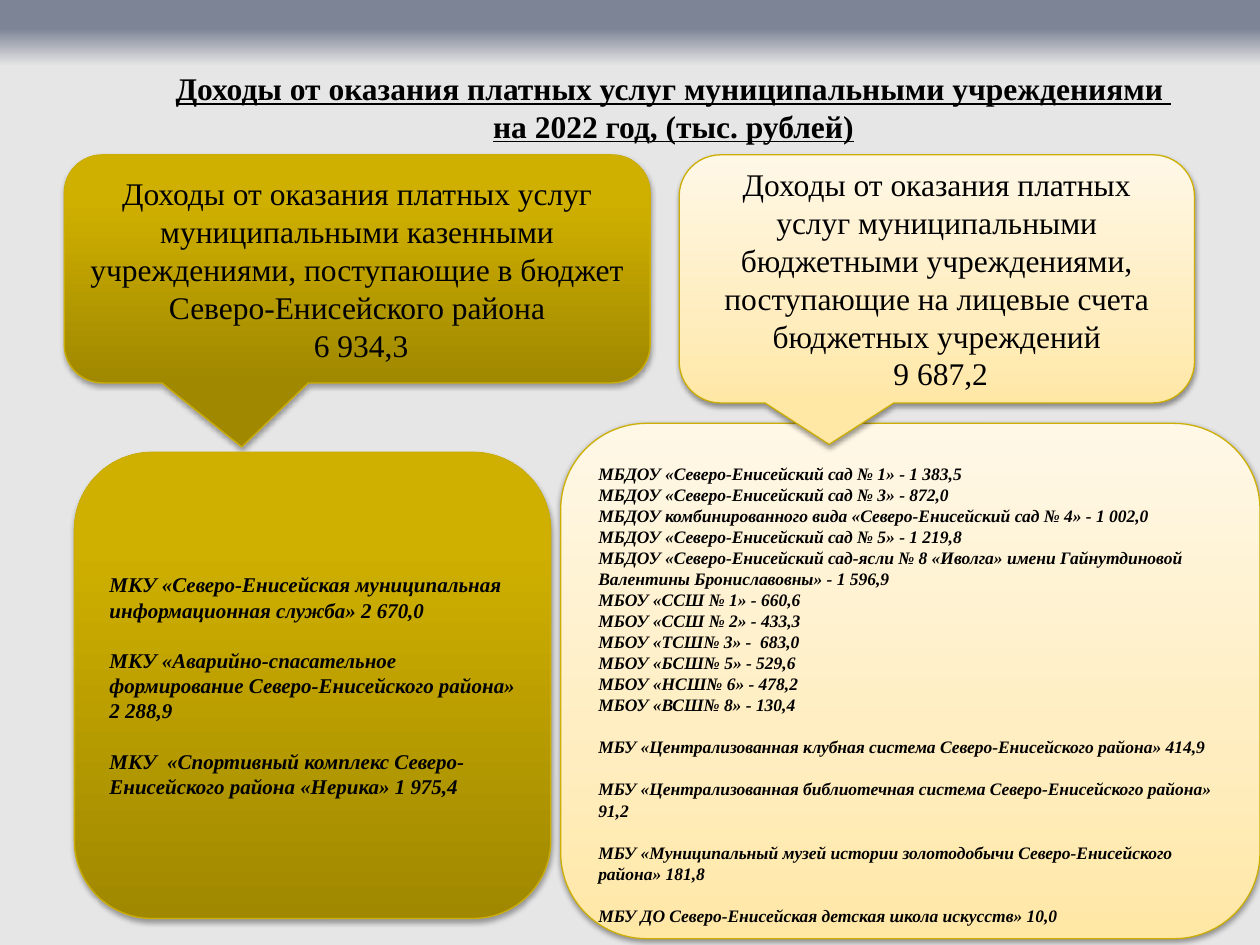
import pptx
import pptx.dml.color
import pptx.enum.shapes
import pptx.enum.text
import pptx.oxml.ns
import pptx.util
from dataclasses import dataclass
from lxml import etree

Pt = pptx.util.Pt
SHAPES = pptx.enum.shapes.MSO_SHAPE
ANCHOR = pptx.enum.text.MSO_ANCHOR
ALIGN = pptx.enum.text.PP_ALIGN
qn = pptx.oxml.ns.qn
Stops = tuple[tuple[int, str], ...]

FONT = "Times New Roman"
BACKDROP: Stops = ((0, "7D8496"), (3, "7D8496"), (7, "E6E6E6"), (100, "E6E6E6"))


@dataclass(frozen=True)
class Theme:
    stops: Stops
    shadow_opacity: int
    shadow_distance: float


@dataclass(frozen=True)
class Panel:
    kind: int
    box: tuple[float, float, float, float]
    theme: Theme
    lines: list[str]
    size: int
    adjustments: tuple[float, ...] = ()
    is_list: bool = False
    gap: float = 0
    gaps_before: tuple[int, ...] = ()
    anchor: int = ANCHOR.MIDDLE
    top_inset: float = 3.6


GOLD = Theme(((0, "A08800"), (80, "CFB000"), (100, "D0B100")), 35, 1.8)
CREAM = Theme(((0, "FFE7A5"), (35, "FFEDBF"), (100, "FFF8E7")), 38, 1.6)

TREASURY_LIST = [
    "МКУ «Северо-Енисейская муниципальная информационная служба» 2 670,0",
    "МКУ «Аварийно-спасательное формирование Северо-Енисейского района» 2 288,9",
    "МКУ  «Спортивный комплекс Северо-Енисейского района «Нерика» 1 975,4",
]
BUDGET_LIST = [
    "МБДОУ «Северо-Енисейский сад № 1» - 1 383,5",
    "МБДОУ «Северо-Енисейский сад № 3» - 872,0",
    "МБДОУ комбинированного вида «Северо-Енисейский сад № 4» - 1 002,0",
    "МБДОУ «Северо-Енисейский сад № 5» - 1 219,8",
    "МБДОУ «Северо-Енисейский сад-ясли № 8 «Иволга» имени Гайнутдиновой "
    "Валентины Брониславовны» - 1 596,9",
    "МБОУ «ССШ № 1» - 660,6",
    "МБОУ «ССШ № 2» - 433,3",
    "МБОУ «ТСШ№ 3» -  683,0",
    "МБОУ «БСШ№ 5» - 529,6",
    "МБОУ «НСШ№ 6» - 478,2",
    "МБОУ «ВСШ№ 8» - 130,4",
    "МБУ «Централизованная клубная система Северо-Енисейского района» 414,9",
    "МБУ «Централизованная библиотечная система Северо-Енисейского района» 91,2",
    "МБУ «Муниципальный музей истории золотодобычи Северо-Енисейского района» 181,8",
    "МБУ ДО Северо-Енисейская детская школа искусств» 10,0",
]

PANELS = [
    Panel(SHAPES.ROUNDED_RECTANGULAR_CALLOUT, (36.7, 88.5, 334.8, 130.3), GOLD,
          ["Доходы от оказания платных услуг муниципальными казенными учреждениями, "
           "поступающие в бюджет Северо-Енисейского района", " 6 934,3"],
          18, (-0.197, 0.781, 0.167)),
    Panel(SHAPES.FLOWCHART_ALTERNATE_PROCESS, (42.5, 258.5, 272.2, 266.4), GOLD,
          TREASURY_LIST, 12, is_list=True, gap=14.4, gaps_before=(1, 2)),
    Panel(SHAPES.ROUNDED_RECTANGLE, (320.4, 241.9, 399.6, 294.5), CREAM,
          BUDGET_LIST, 10, (0.167,), is_list=True, gap=12,
          gaps_before=(11, 12, 13, 14), anchor=ANCHOR.TOP, top_inset=8.3),
    Panel(SHAPES.ROUNDED_RECTANGULAR_CALLOUT, (388.1, 88.5, 294.5, 141.8), CREAM,
          ["Доходы от оказания платных услуг муниципальными бюджетными учреждениями, "
           "поступающие на лицевые счета бюджетных учреждений", " 9 687,2"],
          18, (-0.209, 0.667, 0.167)),
]


def color(value: str) -> pptx.dml.color.RGBColor:
    return pptx.dml.color.RGBColor.from_string(value)


def add_color(parent, value: str):
    return etree.SubElement(parent, qn("a:srgbClr"), val=value)


def set_gradient(fill, owner, stops: Stops, angle: int) -> None:
    fill.gradient()
    gradient = owner.find(".//" + qn("a:gradFill"))
    for child in list(gradient):
        gradient.remove(child)
    stop_list = etree.SubElement(gradient, qn("a:gsLst"))
    for position, value in stops:
        stop = etree.SubElement(stop_list, qn("a:gs"), pos=str(position * 1000))
        add_color(stop, value)
    etree.SubElement(gradient, qn("a:lin"), ang=str(angle * 60000), scaled="0")


def set_shadow(shape, theme: Theme) -> None:
    shape.shadow.inherit = False
    effects = shape._element.spPr.find(qn("a:effectLst"))
    shadow = etree.SubElement(
        effects, qn("a:outerShdw"), blurRad=str(Pt(3.1)),
        dist=str(Pt(theme.shadow_distance)), dir="5400000", rotWithShape="0")
    etree.SubElement(add_color(shadow, "000000"), qn("a:alpha"),
                     val=str(theme.shadow_opacity * 1000))


def style_paragraph(paragraph, size: int, align: int, bold: bool = False) -> None:
    paragraph.alignment = align
    paragraph.font.name = FONT
    paragraph.font.size = Pt(size)
    paragraph.font.bold = bold
    paragraph.font.color.rgb = color("000000")


def add_title(slide, text: str) -> None:
    title = slide.shapes.add_textbox(Pt(85.7), Pt(21.6), Pt(598.3), Pt(78.5))
    title.text_frame.word_wrap = True
    title.text_frame.vertical_anchor = ANCHOR.MIDDLE
    title.text_frame.text = text
    heading = title.text_frame.paragraphs[0]
    style_paragraph(heading, 18, ALIGN.CENTER, bold=True)
    heading.font.underline = True


def add_panel(slide, panel: Panel) -> None:
    shape = slide.shapes.add_shape(panel.kind, *map(Pt, panel.box))
    for index, value in enumerate(panel.adjustments):
        shape.adjustments[index] = value
    set_gradient(shape.fill, shape._element.spPr, panel.theme.stops, 270)
    shape.line.color.rgb = color("CCAE05")
    shape.line.width = Pt(0.75)
    set_shadow(shape, panel.theme)

    frame = shape.text_frame
    frame.word_wrap = True
    frame.vertical_anchor = panel.anchor
    frame.margin_top = Pt(panel.top_inset)
    frame.text = "\n".join(panel.lines)
    align = ALIGN.LEFT if panel.is_list else ALIGN.CENTER
    for index, paragraph in enumerate(frame.paragraphs):
        style_paragraph(paragraph, panel.size, align, bold=panel.is_list)
        paragraph.font.italic = panel.is_list
        if index in panel.gaps_before:
            paragraph.space_before = Pt(panel.gap)


def main() -> None:
    deck = pptx.Presentation()
    deck.slide_width, deck.slide_height = Pt(720), Pt(540)
    slide = deck.slides.add_slide(deck.slide_layouts[6])

    # Background and heading
    set_gradient(slide.background.fill, slide._element, BACKDROP, 90)
    add_title(slide, "Доходы от оказания платных услуг муниципальными учреждениями \v"
                     "на 2022 год, (тыс. рублей)")

    # Totals and the institutions behind them
    for panel in PANELS:
        add_panel(slide, panel)

    deck.save("out.pptx")


if __name__ == "__main__":
    main()
